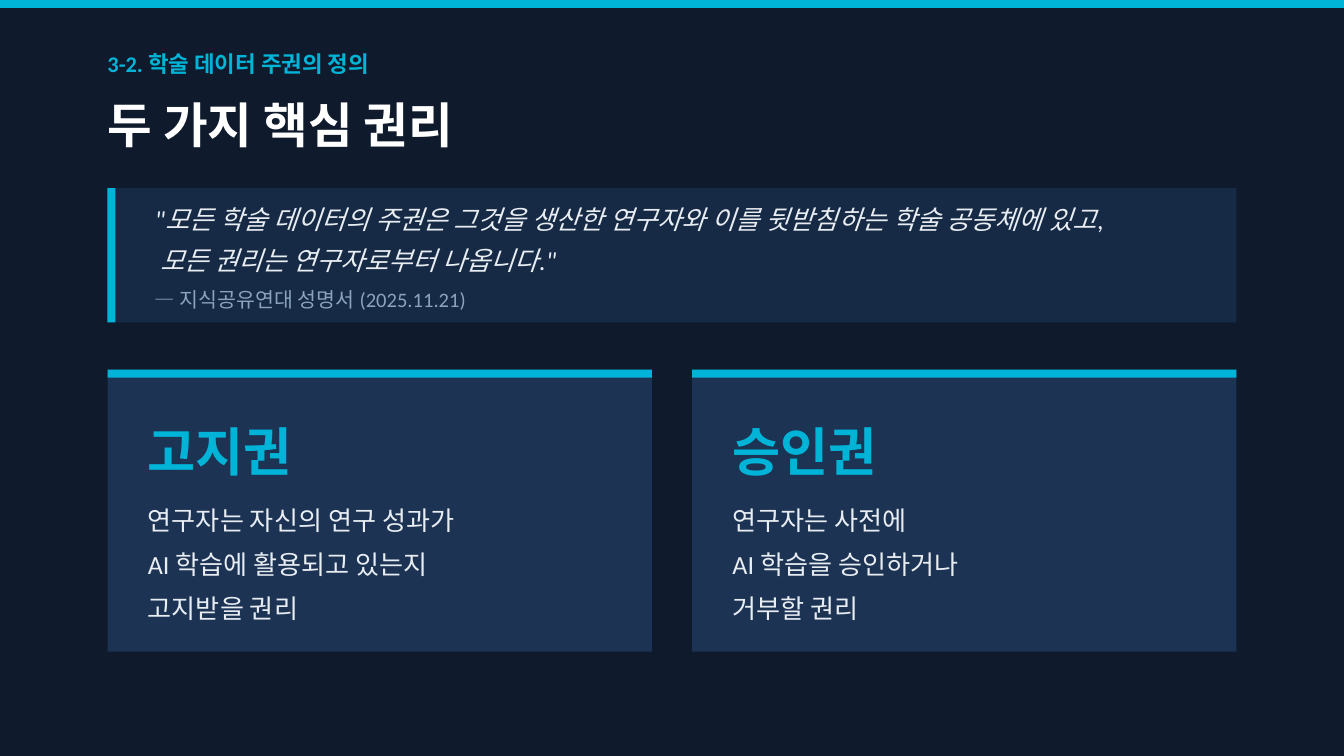
from dataclasses import dataclass
from typing import NamedTuple

from pptx import Presentation, util as u
from pptx.dml.color import RGBColor
from pptx.enum import shapes, text


class Style(NamedTuple):
    font: str
    size: int
    color: str
    bold: bool = False
    italic: bool = False
    lead: float = 1.0


@dataclass(frozen=True)
class Theme:
    back: str = "0F1B2D"
    panel: str = "162A45"
    card: str = "1C3354"
    accent: str = "00B4D8"
    label: Style = Style("Calibri", 12, "00B4D8", bold=True)
    title: Style = Style("TeX Gyre Schola", 26, "FFFFFF", bold=True)
    quote: Style = Style("Calibri", 14, "E8EDF2", italic=True, lead=1.3)
    source: Style = Style("Calibri", 11, "8BA3BE")
    head: Style = Style("TeX Gyre Schola", 28, "00B4D8", bold=True)
    body: Style = Style("Calibri", 14, "E8EDF2", lead=1.4)


class Box(NamedTuple):
    """Left, top, width and height in grid cells."""
    x: float
    y: float
    w: float
    h: float

    def place(self) -> list[u.Emu]:
        return [u.Inches(n * CELL) for n in self]


class Right(NamedTuple):
    name: str
    lines: list[str]


THEME = Theme()
CELL = 0.05  # inches
COLS = 200
ROWS = COLS * 9 / 16
EDGE = 16
WIDE = COLS - 2 * EDGE
GAP = 6
PAD = 6
RULE = 1.2
HANG = u.Pt(3)

RIGHTS = [
    Right("고지권", ["연구자는 자신의 연구 성과가", "AI 학습에 활용되고 있는지", "고지받을 권리"]),
    Right("승인권", ["연구자는 사전에", "AI 학습을 승인하거나", "거부할 권리"]),
]
QUOTE = [
    "\"모든 학술 데이터의 주권은 그것을 생산한 연구자와 이를 뒷받침하는 학술 공동체에 있고,",
    "모든 권리는 연구자로부터 나옵니다.\"",
]


def block(slide, box: Box, color: str) -> None:
    rect = slide.shapes.add_shape(shapes.MSO_SHAPE.RECTANGLE, *box.place())
    rect.shadow.inherit = False
    rect.fill.solid()
    rect.fill.fore_color.rgb = RGBColor.from_string(color)
    rect.line.fill.background()


def write(slide, box: Box, lines: list[str], style: Style):
    frame = slide.shapes.add_textbox(*box.place()).text_frame
    frame.word_wrap = True
    frame.vertical_anchor = text.MSO_ANCHOR.MIDDLE
    frame.margin_left = frame.margin_right = 0
    frame.margin_top = frame.margin_bottom = 0
    frame.text = "\n".join(lines)
    for para in frame.paragraphs:
        if style.lead != 1:
            para.line_spacing = style.lead
        font = para.font
        font.name, font.size = style.font, u.Pt(style.size)
        font.bold, font.italic = style.bold, style.italic
        font.color.rgb = RGBColor.from_string(style.color)
    return frame


def quote(slide, top: float) -> None:
    block(slide, Box(EDGE, top, WIDE, 20), THEME.panel)
    block(slide, Box(EDGE, top, RULE, 20), THEME.accent)
    left = EDGE + 7
    frame = write(slide, Box(left, top + 1, 156, 12), QUOTE, THEME.quote)
    # The second line aligns with the text after the opening mark.
    frame.paragraphs[1]._p.get_or_add_pPr().set("marL", str(HANG))
    write(slide, Box(left, top + 14, 156, 5),
          ["— 지식공유연대 성명서 (2025.11.21)"], THEME.source)


def card(slide, box: Box, right: Right) -> None:
    block(slide, box, THEME.card)
    block(slide, box._replace(h=RULE), THEME.accent)
    left, wide = box.x + PAD, box.w - 2 * PAD
    write(slide, Box(left, box.y + 6, wide, 12), [right.name], THEME.head)
    write(slide, Box(left, box.y + 18, wide, 20), right.lines, THEME.body)


def main() -> None:
    deck = Presentation()
    deck.slide_width, deck.slide_height = u.Inches(COLS * CELL), u.Inches(ROWS * CELL)
    slide = deck.slides.add_slide(deck.slide_layouts[6])
    fill = slide.background.fill
    fill.solid()
    fill.fore_color.rgb = RGBColor.from_string(THEME.back)

    block(slide, Box(0, 0, COLS, RULE), THEME.accent)
    write(slide, Box(EDGE, 6, 100, 7), ["3-2. 학술 데이터 주권의 정의"], THEME.label)
    write(slide, Box(EDGE, 13, WIDE, 11), ["두 가지 핵심 권리"], THEME.title)
    quote(slide, 28)

    wide = (WIDE - GAP * (len(RIGHTS) - 1)) / len(RIGHTS)
    for col, right in enumerate(RIGHTS):
        card(slide, Box(EDGE + col * (wide + GAP), 55, wide, 42), right)
    deck.save("out.pptx")


if __name__ == "__main__":
    main()
